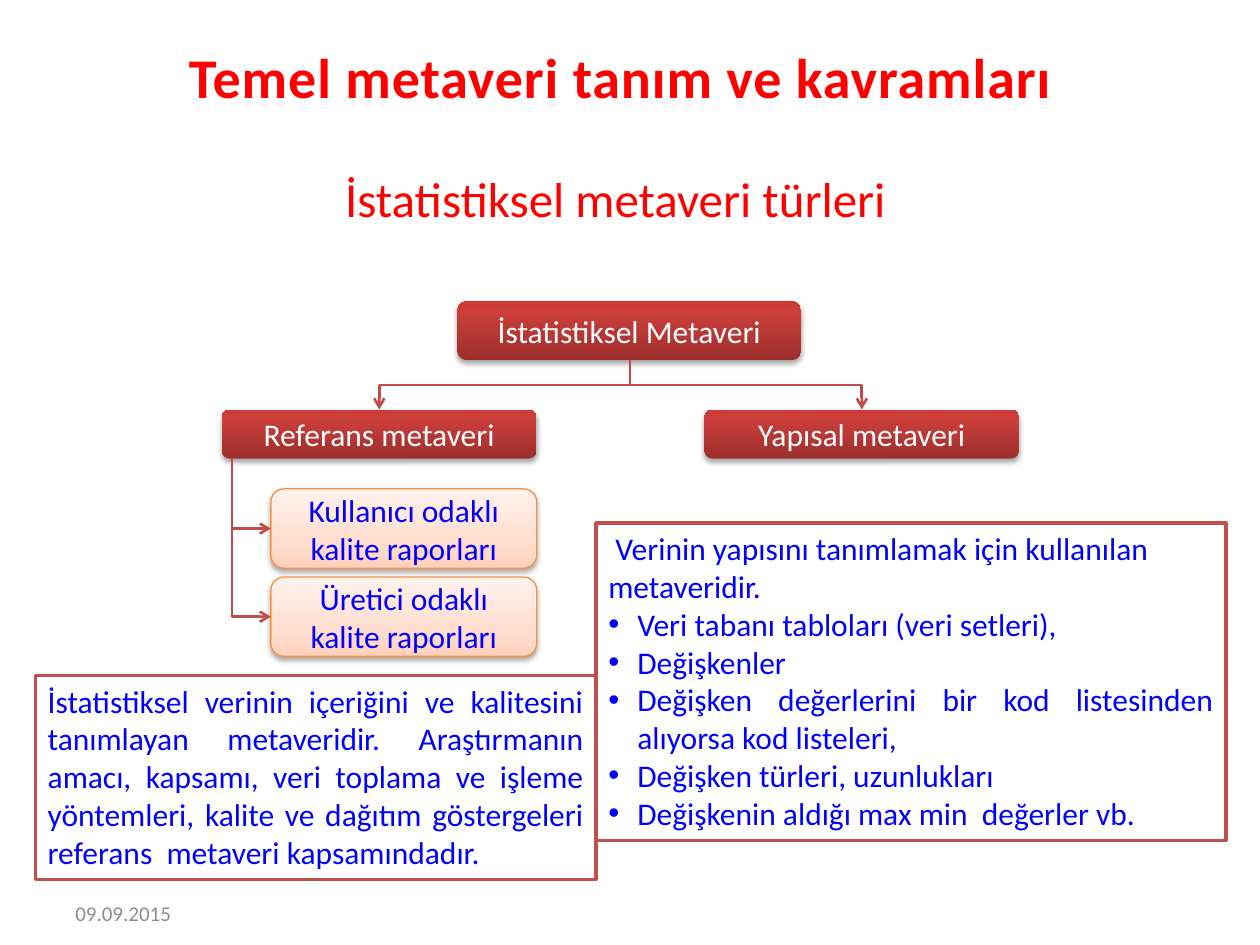
from lxml.etree import SubElement
from pptx import Presentation
from pptx.dml.color import RGBColor
from pptx.enum.shapes import MSO_CONNECTOR, MSO_SHAPE
from pptx.enum.text import MSO_ANCHOR, PP_ALIGN
from pptx.oxml import parse_xml
from pptx.oxml.ns import nsdecls, qn
from pptx.util import Inches, Pt

COLORS = {
    "heading": "FF0000", "body": "0000FF", "date": "8C8C8C", "node": "FFFFFF",
    "paper": "FFFFFF", "frame": "C0504D", "arrow": "BF4C48", "leaf_edge": "F69240",
    "shadow": "000000",
}
# Gradients run from bottom to top: (position in percent, colour)
RED = [(0, "9C2F2D"), (80, "CB3E3A"), (100, "CE3B37")]
PEACH = [(0, "FFD2BD"), (35, "FFDED0"), (100, "FFF2ED")]


def rgb(name):
    return RGBColor.from_string(COLORS[name])


class SlideBuilder:
    font = {"name": "Calibri", "size": Pt(18), "bold": False}
    bullet_indent = Inches(0.23)

    def __init__(self, slide):
        self.slide = slide

    def add_lines(self, shape, lines, color, align=PP_ALIGN.LEFT,
                  anchor=MSO_ANCHOR.TOP, bullets=False, **font):
        """Fill a shape with paragraphs; with bullets, all but the first get one."""
        frame = shape.text_frame
        frame.word_wrap = True
        frame.vertical_anchor = anchor
        for i, line in enumerate(lines):
            paragraph = frame.paragraphs[0] if i == 0 else frame.add_paragraph()
            paragraph.alignment = align
            if bullets and i == 0:
                paragraph.alignment = PP_ALIGN.LEFT
            elif bullets:
                properties = paragraph._p.get_or_add_pPr()
                properties.set("marL", str(self.bullet_indent))
                properties.set("indent", str(-self.bullet_indent))
                SubElement(properties, qn("a:buFont"), typeface="Arial")
                SubElement(properties, qn("a:buChar"), char="•")
            run = paragraph.add_run()
            run.text = line
            for key, value in {**self.font, **font}.items():
                setattr(run.font, key, value)
            run.font.color.rgb = rgb(color)
        return shape

    def text(self, box, line, color, **style):
        label = self.slide.shapes.add_textbox(*map(Inches, box))
        return self.add_lines(label, [line], color, **style)

    def panel(self, box, lines, bullets=False):
        panel = self.slide.shapes.add_shape(MSO_SHAPE.RECTANGLE, *map(Inches, box))
        panel.shadow.inherit = False
        panel.fill.solid()
        panel.fill.fore_color.rgb = rgb("paper")
        panel.line.color.rgb = rgb("frame")
        panel.line.width = Pt(2)
        self.add_lines(panel, lines, "body", PP_ALIGN.JUSTIFY, bullets=bullets)

    def node(self, box, line, stops, color, edge=None):
        node = self.slide.shapes.add_shape(MSO_SHAPE.ROUNDED_RECTANGLE, *map(Inches, box))
        # Gradient fill
        gradient = "".join(
            f'<a:gs pos="{pos * 1000}"><a:srgbClr val="{hue}"/></a:gs>' for pos, hue in stops)
        node._element.spPr.find(qn("a:prstGeom")).addnext(parse_xml(
            f'<a:gradFill {nsdecls("a")} rotWithShape="1"><a:gsLst>{gradient}</a:gsLst>'
            '<a:lin ang="16200000" scaled="0"/></a:gradFill>'))
        # Outline
        if edge:
            node.line.color.rgb = rgb(edge)
            node.line.width = Pt(0.75)
        else:
            node.line.fill.background()
        # Soft shadow straight below
        node.shadow.inherit = False
        effects = node._element.spPr.find(qn("a:effectLst"))
        effects.append(parse_xml(
            f'<a:outerShdw {nsdecls("a")} blurRad="{Pt(3.1)}" dist="{Pt(1.8)}" dir="5400000" '
            f'rotWithShape="0"><a:srgbClr val="{COLORS["shadow"]}"><a:alpha val="35000"/>'
            '</a:srgbClr></a:outerShdw>'))
        self.add_lines(node, [line], color, PP_ALIGN.CENTER, MSO_ANCHOR.MIDDLE)

    def arrow(self, x1, y1, x2, y2, bends=2):
        """Elbow arrow that leaves downwards: a turned connector around its centre."""
        length, spread = y2 - y1, abs(x2 - x1)
        left, top = (x1 + x2 - length) / 2, (y1 + y2 - spread) / 2
        arrow = self.slide.shapes.add_connector(
            MSO_CONNECTOR.ELBOW, *map(Inches, (left, top, left + length, top + spread)))
        properties = arrow._element.spPr
        transform = properties.find(qn("a:xfrm"))
        if x2 < x1:
            transform.set("rot", "5400000")
        else:
            transform.set("rot", "16200000")
            transform.set("flipH", "1")
        properties.find(qn("a:prstGeom")).set("prst", f"bentConnector{bends + 1}")
        arrow.line.color.rgb = rgb("arrow")
        arrow.line.width = Pt(1.5)
        SubElement(properties.find(qn("a:ln")), qn("a:tailEnd"), type="arrow")
        SubElement(properties, qn("a:effectLst"))


def main():
    deck = Presentation()
    deck.slide_width, deck.slide_height = Inches(10), Inches(7.5)
    builder = SlideBuilder(deck.slides.add_slide(deck.slide_layouts[6]))

    # Headings and date
    title = builder.text((1.06, 0.29, 7.73, 0.87), "Temel metaveri tanım ve kavramları",
                         "heading", align=PP_ALIGN.CENTER, size=Pt(32), bold=True)
    title.text_frame.paragraphs[0].runs[0]._r.get_or_add_rPr().set("spc", "50")
    builder.text((2.64, 1.29, 5.57, 0.57), "İstatistiksel metaveri türleri",
                 "heading", size=Pt(28))
    builder.text((0.5, 7.05, 2.33, 0.4), "09.09.2015", "date",
                 anchor=MSO_ANCHOR.MIDDLE, size=Pt(12))

    # Explanations
    builder.panel((4.73, 4.15, 5, 2.52), [
        " Verinin yapısını tanımlamak için kullanılan metaveridir.",
        "Veri tabanı tabloları (veri setleri),",
        "Değişkenler",
        "Değişken değerlerini bir kod listesinden alıyorsa kod listeleri,",
        "Değişken türleri, uzunlukları",
        "Değişkenin aldığı max min  değerler vb.",
    ], bullets=True)
    builder.panel((0.28, 5.36, 4.45, 1.62), [
        "İstatistiksel verinin içeriğini ve kalitesini tanımlayan metaveridir. "
        "Araştırmanın amacı, kapsamı, veri toplama ve işleme yöntemleri, kalite ve "
        "dağıtım göstergeleri referans  metaveri kapsamındadır."])

    # Root and its two branches
    root_x, root_bottom, branch_top = 5, 2.86, 3.25
    branch_width, branch_height = 2.5, 0.39
    builder.node((3.63, 2.39, 2.73, 0.47), "İstatistiksel Metaveri", RED, "node")
    for left, name in ((1.76, "Referans metaveri"), (5.59, "Yapısal metaveri")):
        builder.node((left, branch_top, branch_width, branch_height), name, RED, "node")
        builder.arrow(root_x, root_bottom, left + branch_width / 2, branch_top)

    # Reports below the reference branch
    trunk_x, trunk_y = 1.84, branch_top + branch_height
    leaf_left, leaf_height = 2.15, 0.63
    for i, audience in enumerate(("Kullanıcı", "Üretici")):
        top = 3.88 + i * 0.7
        builder.node((leaf_left, top, 2.11, leaf_height),
                     f"{audience} odaklı kalite raporları", PEACH, "body", "leaf_edge")
        leaf_middle = top + leaf_height / 2
        builder.arrow(trunk_x, trunk_y, leaf_left, leaf_middle, bends=1)
        trunk_y = leaf_middle

    deck.save("out.pptx")


if __name__ == "__main__":
    main()
